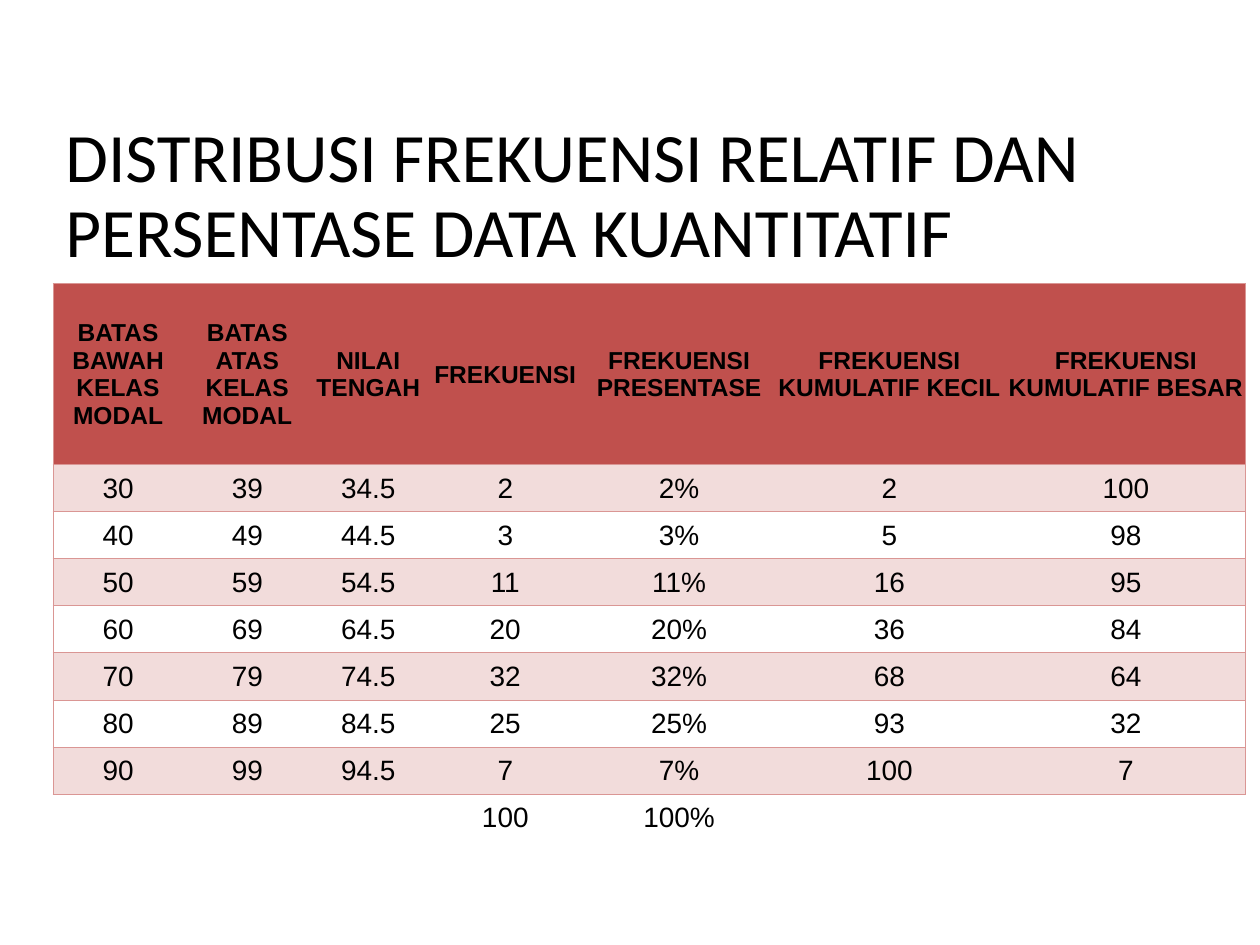
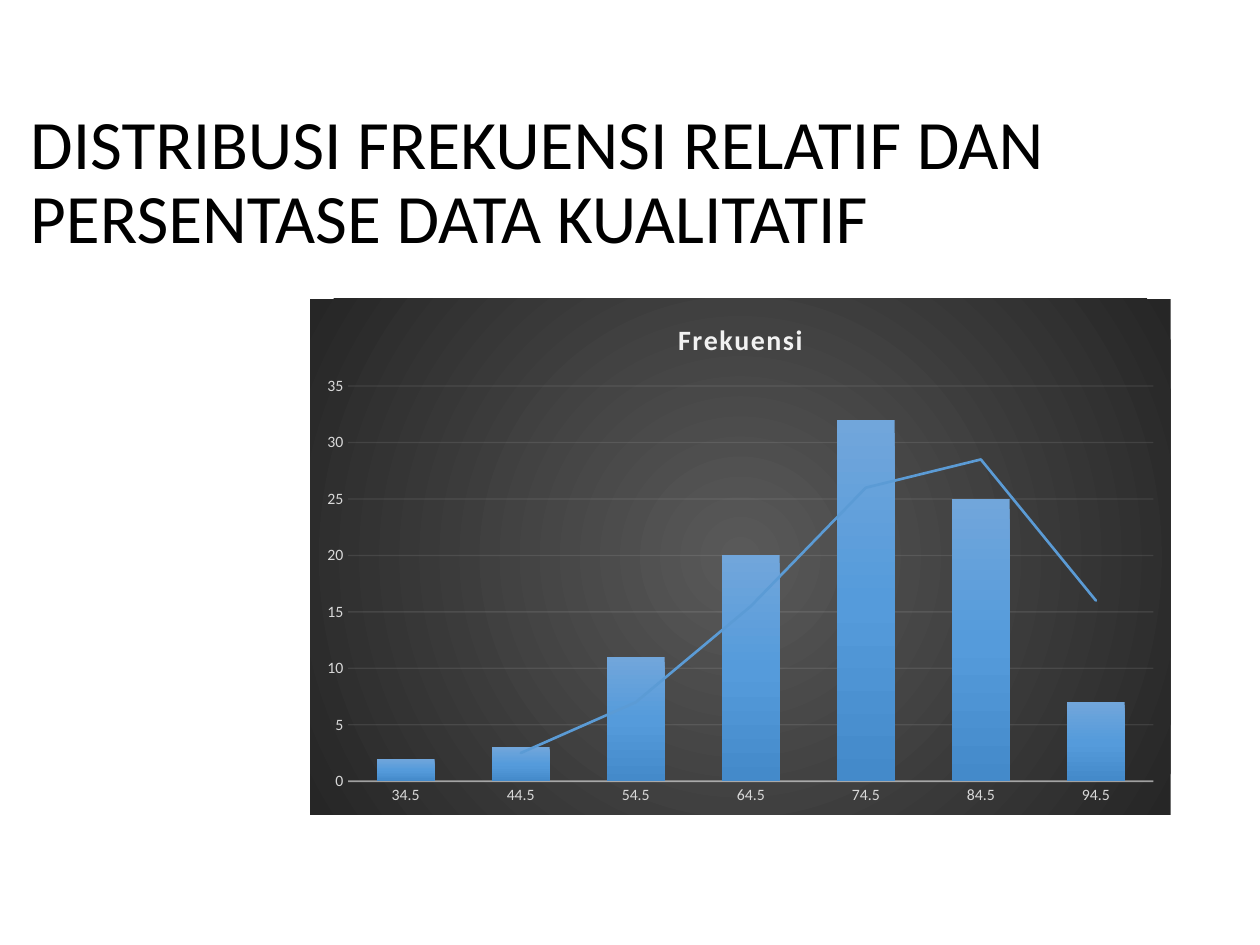
from itertools import accumulate

from lxml import etree
from pptx import Presentation
from pptx.chart.data import CategoryChartData
from pptx.dml.color import RGBColor
from pptx.enum.chart import XL_CHART_TYPE, XL_TICK_MARK
from pptx.enum.text import MSO_ANCHOR, PP_ALIGN
from pptx.oxml import parse_xml
from pptx.oxml.ns import nsdecls, qn
from pptx.util import Cm, Pt

BLACK = RGBColor(0x00, 0x00, 0x00)
HEAD = RGBColor(0xC0, 0x50, 0x4D)
BAND = RGBColor(0xF2, 0xDC, 0xDB)
RULE = RGBColor(0xDA, 0x96, 0x94)
PALE = RGBColor(0xF2, 0xF2, 0xF2)
LABEL = RGBColor(0xD9, 0xD9, 0xD9)
TREND = RGBColor(0x5B, 0x9B, 0xD5)
BARS = [(0, RGBColor(0x71, 0xA6, 0xDB)), (50, RGBColor(0x55, 0x9B, 0xDB)),
        (100, RGBColor(0x44, 0x8A, 0xCA))]
GLOW = [(0, RGBColor(0x59, 0x59, 0x59)), (100, RGBColor(0x26, 0x26, 0x26))]

DOWN = '<a:lin ang="5400000" scaled="0"/>'
ROUND = ('<a:path path="circle"><a:fillToRect l="50000" t="50000" '
         'r="50000" b="50000"/></a:path>')
NO_STYLE = "{2D5ABB26-0587-4C30-8999-92F81FD0307C}"

# Class data used by both slides
FREQS = [2, 3, 11, 20, 32, 25, 7]
LOWS = [30 + 10 * i for i in range(len(FREQS))]
MIDS = [low + 4.5 for low in LOWS]
TOTAL = sum(FREQS)

HEADS = ["BATAS BAWAH KELAS MODAL", "BATAS ATAS KELAS MODAL", "NILAI TENGAH",
         "FREKUENSI", "FREKUENSI PRESENTASE", "FREKUENSI KUMULATIF KECIL",
         "FREKUENSI KUMULATIF BESAR"]
WIDTHS = [2.62, 2.59, 2.29, 3.23, 3.78, 4.7, 4.83]
HEAD_H, ROW_H = 3.64, 0.95


def set_font(font, name, size, color, bold=False):
    font.name, font.size, font.bold = name, Pt(size), bold
    font.color.rgb = color


def add_title(slide, box, text):
    frame = slide.shapes.add_textbox(*map(Cm, box)).text_frame
    frame.word_wrap = True
    frame.vertical_anchor = MSO_ANCHOR.MIDDLE
    para = frame.paragraphs[0]
    para.text = text
    para.line_spacing = 0.9
    set_font(para.font, "Calibri", 39.6, BLACK)


def list_rows():
    """Header, one row for each class, then the totals."""
    rows = [HEADS]
    for low, mid, freq, cum in zip(LOWS, MIDS, FREQS, accumulate(FREQS)):
        rows.append([low, low + 9, mid, freq, f"{freq}%", cum,
                     TOTAL - cum + freq])
    rows.append(["", "", "", TOTAL, f"{TOTAL}%", "", ""])
    return rows


def add_edges(cell, sides):
    props = cell._tc.get_or_add_tcPr()
    for i, side in enumerate(sides):
        props.insert(i, parse_xml(
            f'<a:ln{side} {nsdecls("a")} w="6350"><a:solidFill>'
            f'<a:srgbClr val="{RULE}"/></a:solidFill></a:ln{side}>'))


def fill_cell(cell, text, size, color, bold):
    cell.margin_left = cell.margin_right = cell.margin_top = Cm(0.02)
    cell.margin_bottom = 0
    cell.vertical_anchor = MSO_ANCHOR.MIDDLE
    para = cell.text_frame.paragraphs[0]
    para.text = str(text)
    para.alignment = PP_ALIGN.CENTER
    set_font(para.font, "Arial", size, BLACK, bold)
    if color is None:
        cell.fill.background()
    else:
        cell.fill.solid()
        cell.fill.fore_color.rgb = color


def add_grid(slide, left, top):
    rows = list_rows()
    last, end = len(rows) - 1, len(WIDTHS) - 1
    table = slide.shapes.add_table(
        len(rows), len(WIDTHS), Cm(left), Cm(top), Cm(sum(WIDTHS)),
        Cm(HEAD_H + last * ROW_H)).table
    table.first_row = table.horz_banding = False
    table._tbl.tblPr.find(qn("a:tableStyleId")).text = NO_STYLE
    for col, width in zip(table.columns, WIDTHS):
        col.width = Cm(width)
    for r, row in enumerate(rows):
        table.rows[r].height = Cm(ROW_H if r else HEAD_H)
        color = HEAD if r == 0 else BAND if r % 2 and r < last else None
        for c, text in enumerate(row):
            cell = table.cell(r, c)
            fill_cell(cell, text, 16 if r else 14, color, r == 0)
            sides = "T" if r == last else (
                "L" * (c == 0) + "R" * (c == end) + "TB")
            add_edges(cell, sides)


def make_blend(stops, shape):
    marks = "".join(f'<a:gs pos="{pos * 1000}"><a:srgbClr val="{color}"/></a:gs>'
                    for pos, color in stops)
    return (f'<a:gradFill {nsdecls("a")} rotWithShape="1">'
            f'<a:gsLst>{marks}</a:gsLst>{shape}</a:gradFill>')


def draw_line(line, width, alpha):
    line.width = Pt(width)
    line.color.rgb = PALE
    tone = line._ln.find(".//" + qn("a:srgbClr"))
    etree.SubElement(tone, qn("a:alpha"), val=str(alpha * 1000))


def style_axes(chart):
    for axis in (chart.category_axis, chart.value_axis):
        axis.major_tick_mark = axis.minor_tick_mark = XL_TICK_MARK.NONE
        set_font(axis.tick_labels.font, "Calibri", 9, LABEL)
    draw_line(chart.category_axis.format.line, 1, 54)
    scale = chart.value_axis
    scale.minimum_scale, scale.maximum_scale, scale.major_unit = 0, 35, 5
    scale.format.line.fill.background()
    draw_line(scale.major_gridlines.format.line, 0.75, 10)


def add_trend(series):
    series._element.find(qn("c:cat")).addprevious(parse_xml(
        f'<c:trendline {nsdecls("c", "a")}><c:spPr><a:ln w="19050" cap="rnd">'
        f'<a:solidFill><a:srgbClr val="{TREND}"/></a:solidFill></a:ln></c:spPr>'
        '<c:trendlineType val="movingAvg"/><c:period val="2"/>'
        '<c:dispRSqr val="0"/><c:dispEq val="0"/></c:trendline>'))


def add_bars(slide, box):
    data = CategoryChartData()
    data.categories = [str(mid) for mid in MIDS]
    data.add_series("Frekuensi", FREQS)
    chart = slide.shapes.add_chart(
        XL_CHART_TYPE.COLUMN_CLUSTERED, *map(Cm, box), data).chart
    chart.has_legend = False
    set_font(chart.font, "Calibri", 10, BLACK)

    # Heading with spaced letters
    para = chart.chart_title.text_frame.paragraphs[0]
    run = para.add_run()
    run.text = "Frekuensi"
    set_font(run.font, "Calibri", 16, PALE, True)
    run.font._rPr.set("spc", "100")
    chart.chart_title.include_in_layout = False

    # Columns and their moving average
    plot = chart.plots[0]
    plot.gap_width, plot.overlap = 100, -24
    plot.vary_by_categories = False
    series = plot.series[0]
    series.invert_if_negative = False
    series._element.get_or_add_spPr().append(parse_xml(make_blend(BARS, DOWN)))
    add_trend(series)
    style_axes(chart)

    # Dark backdrop
    chart._chartSpace.find(qn("c:chart")).addnext(parse_xml(
        f'<c:spPr {nsdecls("c", "a")}>{make_blend(GLOW, ROUND)}'
        '<a:ln><a:noFill/></a:ln></c:spPr>'))


def main():
    deck = Presentation()
    deck.slide_width, deck.slide_height = Cm(25.4), Cm(19.05)
    first, second = (deck.slides.add_slide(deck.slide_layouts[6])
                     for _ in range(2))
    lead = "DISTRIBUSI FREKUENSI RELATIF DAN PERSENTASE DATA "

    add_title(first, (1.07, 2.64, 24.33, 2.69), lead + "KUANTITATIF")
    add_grid(first, 1.07, 5.72)

    add_title(second, (0.36, 2.77, 27.46, 1.88), lead + "KUALITATIF")
    add_bars(second, (6.25, 6.02, 17.35, 10.41))
    deck.save("out.pptx")


if __name__ == "__main__":
    main()
